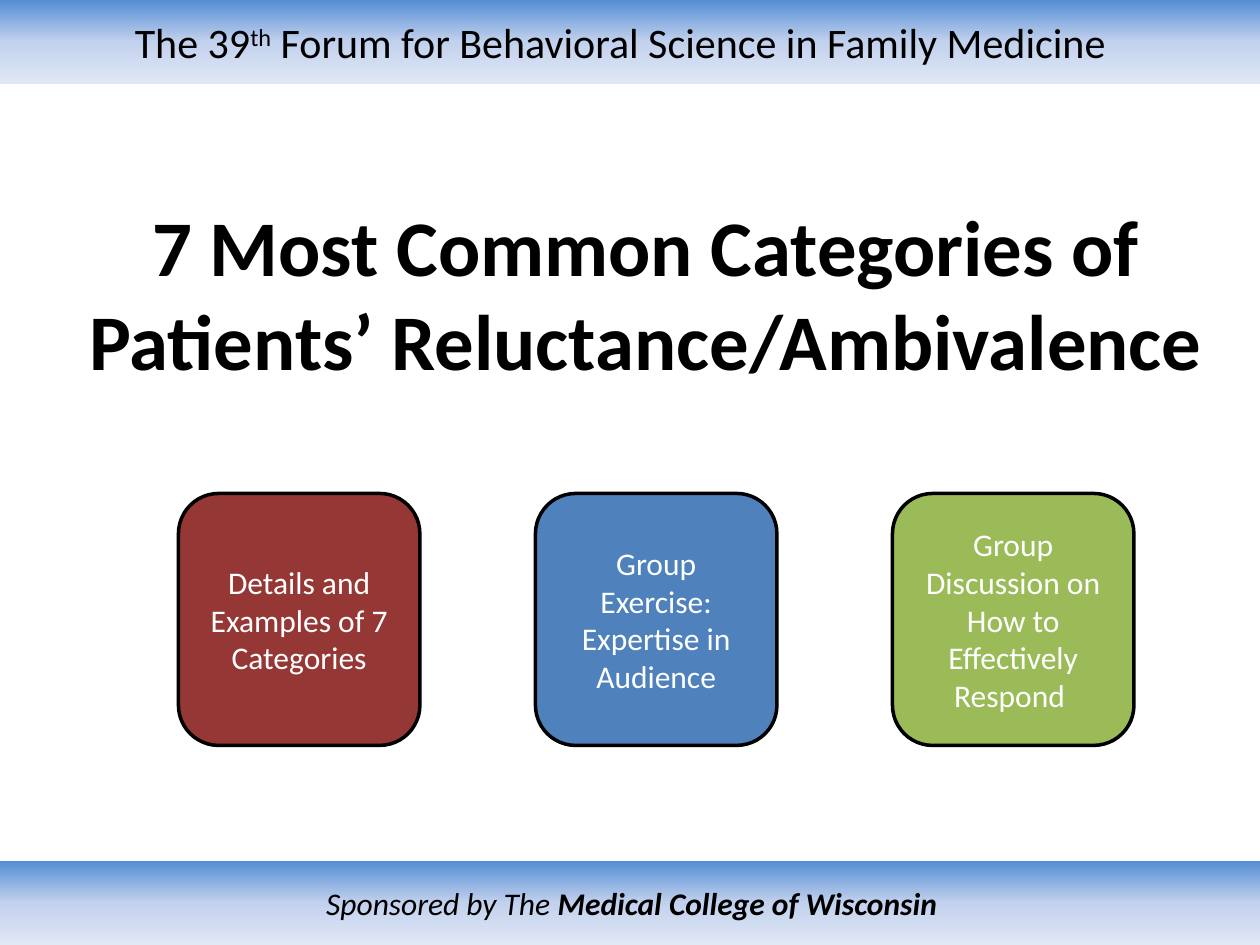
from copy import deepcopy
from typing import NamedTuple

from pptx import Presentation
from pptx.dml.color import RGBColor
from pptx.enum.shapes import MSO_SHAPE as Preset
from pptx.enum.text import MSO_ANCHOR as Anchor, PP_ALIGN as Align
from pptx.util import Pt

FONT = "Calibri"
BLACK, WHITE = "000000", "FFFFFF"
BAND_STOPS = [(0, "558ED5"), (0.5, "C2D1ED"), (1, "E1E8F5")]
BAND_HEIGHT = 48
CARD_LEFT, CARD_TOP, CARD_STEP = 102, 282, 204
CARD_WIDTH, CARD_HEIGHT = 138, 144


class Run(NamedTuple):
    text: str
    bold: bool = False
    italic: bool = False
    baseline: int = 0


class Card(NamedTuple):
    color: str
    lines: list[str]


CARDS = [
    Card("953735", ["Details and Examples of 7 Categories"]),
    Card("4F81BD", ["Group Exercise:", "Expertise in Audience"]),
    Card("9BBB59", ["Group Discussion on How to Effectively Respond "]),
]


def rgb(color: str) -> RGBColor:
    return RGBColor.from_string(color)


def write(shape, paragraphs: list[list[Run]], size: float, color: str,
          anchor=Anchor.MIDDLE) -> None:
    frame = shape.text_frame
    frame.word_wrap = True
    frame.vertical_anchor = anchor
    for index, runs in enumerate(paragraphs):
        paragraph = frame.add_paragraph() if index else frame.paragraphs[0]
        paragraph.alignment = Align.CENTER
        for item in runs:
            run = paragraph.add_run()
            run.text = item.text
            font = run.font
            font.name, font.size = FONT, Pt(size)
            font.bold, font.italic = item.bold, item.italic
            font.color.rgb = rgb(color)
            if item.baseline:
                run._r.get_or_add_rPr().set("baseline", str(item.baseline * 1000))


def add_band(slide, top: float, width: float, runs: list[Run], size: float):
    band = slide.shapes.add_shape(Preset.RECTANGLE, 0, Pt(top), Pt(width), Pt(BAND_HEIGHT))
    band.shadow.inherit = False
    band.line.fill.background()
    fill = band.fill
    fill.gradient()
    fill.gradient_angle = 270
    stop_list = band._element.spPr.gradFill.gsLst
    stop_list.append(deepcopy(stop_list[-1]))
    for stop, (position, color) in zip(fill.gradient_stops, BAND_STOPS):
        stop.position = position
        stop.color.rgb = rgb(color)
    write(band, [runs], size, BLACK)
    return band


def add_card(slide, left: float, card: Card) -> None:
    shape = slide.shapes.add_shape(Preset.ROUNDED_RECTANGLE, Pt(left), Pt(CARD_TOP),
                                   Pt(CARD_WIDTH), Pt(CARD_HEIGHT))
    shape.shadow.inherit = False
    shape.fill.solid()
    shape.fill.fore_color.rgb = rgb(card.color)
    shape.line.color.rgb = rgb(BLACK)
    shape.line.width = Pt(2)
    write(shape, [[Run(line)] for line in card.lines], 18, WHITE)


def main() -> None:
    presentation = Presentation()
    presentation.slide_width, presentation.slide_height = Pt(720), Pt(540)
    slide = presentation.slides.add_slide(presentation.slide_layouts[6])

    header = add_band(slide, 0, 720, [
        Run("The 39"), Run("th", baseline=30),
        Run(" Forum for Behavioral Science in Family Medicine"),
    ], 24)
    header.text_frame.margin_right = Pt(18)
    add_band(slide, 540 - BAND_HEIGHT, 722, [
        Run("Sponsored by The ", italic=True),
        Run("Medical College of Wisconsin", bold=True, italic=True),
    ], 18)

    title = slide.shapes.add_textbox(Pt(18), Pt(84), Pt(702), Pt(140.4))
    write(title, [[Run("7 Most Common Categories of Patients’ Reluctance/Ambivalence", bold=True)]],
          45, BLACK, Anchor.BOTTOM)

    for index, card in enumerate(CARDS):
        add_card(slide, CARD_LEFT + index * CARD_STEP, card)

    presentation.save("out.pptx")


if __name__ == "__main__":
    main()
